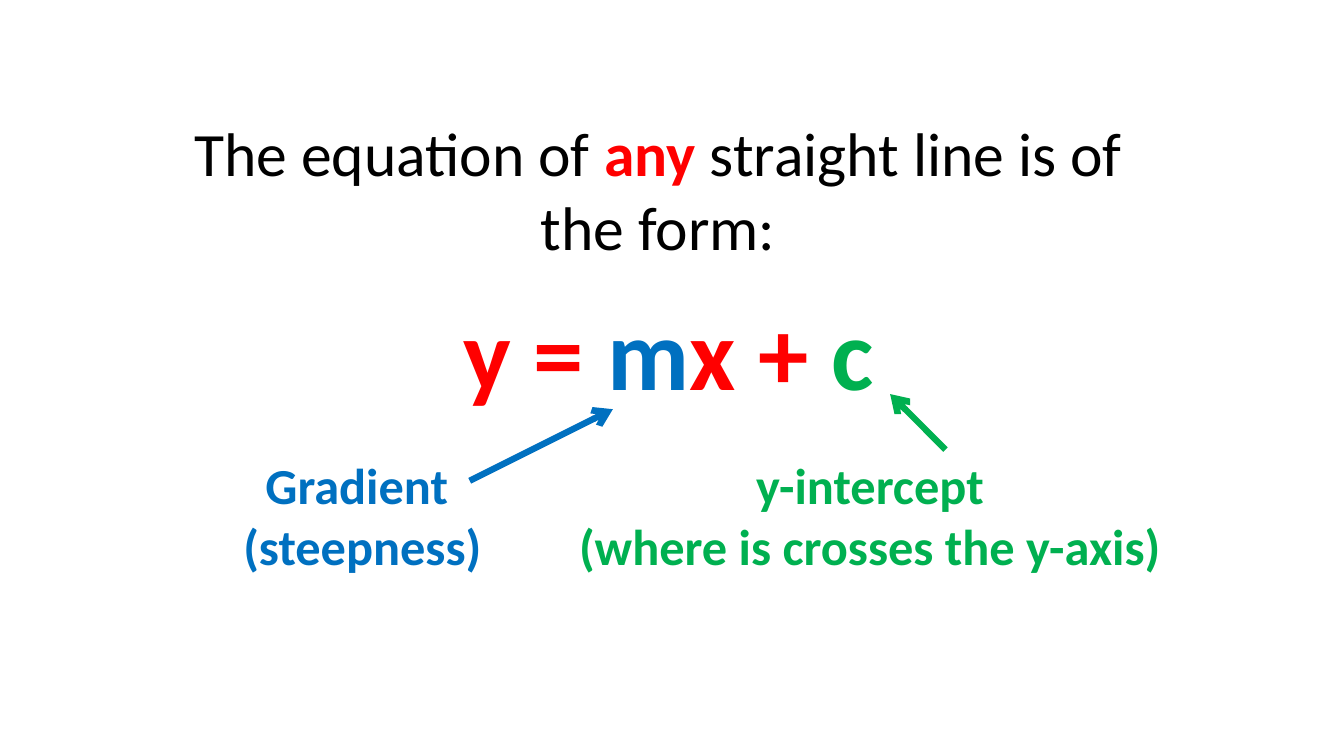
from lxml import etree
from pptx import Presentation
from pptx.dml.color import RGBColor
from pptx.enum.shapes import MSO_CONNECTOR
from pptx.enum.text import MSO_AUTO_SIZE, PP_ALIGN
from pptx.oxml.ns import qn
from pptx.util import Inches, Pt

STRAIGHT = MSO_CONNECTOR.STRAIGHT
FIT = MSO_AUTO_SIZE.SHAPE_TO_FIT_TEXT
LEFT, CENTER = PP_ALIGN.LEFT, PP_ALIGN.CENTER

BLACK = RGBColor(0x00, 0x00, 0x00)
RED = RGBColor(0xFF, 0x00, 0x00)
BLUE = RGBColor(0x00, 0x70, 0xC0)
GREEN = RGBColor(0x00, 0xB0, 0x50)

WIDTH, HEIGHT = Inches(13.33), Inches(7.5)
LABEL_TOP, LABEL_HIGH = 59.47, 17.47


def across(share):
    """Percent of the slide's width."""
    return round(WIDTH * share / 100)


def down(share):
    """Percent of the slide's height."""
    return round(HEIGHT * share / 100)


def add_run(para, text, color, size, bold):
    run = para.add_run()
    run.text = text
    style = {"name": "Calibri", "size": Pt(size), "bold": bold}
    for key, value in style.items():
        setattr(run.font, key, value)
    run.font.color.rgb = color


def add_text(slide, place, lines, size, align=CENTER, wrap=False):
    """Each line is a list of (text, colour, bold) runs."""
    x, y, wide, high = place
    box = slide.shapes.add_textbox(across(x), down(y), across(wide), down(high))
    frame = box.text_frame
    for key, value in {"word_wrap": wrap, "auto_size": FIT}.items():
        setattr(frame, key, value)
    for i, runs in enumerate(lines):
        para = frame.paragraphs[0] if i == 0 else frame.add_paragraph()
        para.alignment = align
        for text, color, bold in runs:
            add_run(para, text, color, size, bold)


def add_label(slide, x, wide, color, texts):
    lines = [[(text, color, True)] for text in texts]
    add_text(slide, (x, LABEL_TOP, wide, LABEL_HIGH), lines, 36)


def add_arrow(slide, start, end, color):
    (x1, y1), (x2, y2) = start, end
    arrow = slide.shapes.add_connector(
        STRAIGHT, across(x1), down(y1), across(x2), down(y2))
    arrow.line.color.rgb = color
    arrow.line.width = Pt(4.5)
    tip = etree.SubElement(arrow.line._get_or_add_ln(), qn("a:tailEnd"))
    tip.set("type", "arrow")
    etree.SubElement(arrow._element.spPr, qn("a:effectLst"))


def main():
    deck = Presentation()
    deck.slide_width, deck.slide_height = WIDTH, HEIGHT
    slide = deck.slides.add_slide(deck.slide_layouts[6])

    # Equation
    add_text(slide, (33.75, 37.73, 32.25, 17.47), [[
        ("y = ", RED, True), ("m", BLUE, True),
        ("x + ", RED, True), ("c", GREEN, True)]], 72, align=LEFT)

    # Opening sentence
    add_text(slide, (12.53, 14.53, 72.9, 21.07), [[
        ("The equation of ", BLACK, False), ("any", RED, True),
        (" straight line is of the form:", BLACK, False)]], 44, wrap=True)

    # Labels for the two constants
    add_label(slide, 17.25, 19.43, BLUE, ["Gradient ", "(steepness)"])
    add_label(slide, 42.08, 45.3, GREEN,
              ["y-intercept", "(where is crosses the y-axis)"])

    # Arrows from labels to constants
    add_arrow(slide, (34.95, 63.6), (45.6, 54.13), BLUE)
    add_arrow(slide, (70.35, LABEL_TOP), (66.23, 52.13), GREEN)

    deck.save("out.pptx")


if __name__ == "__main__":
    main()
